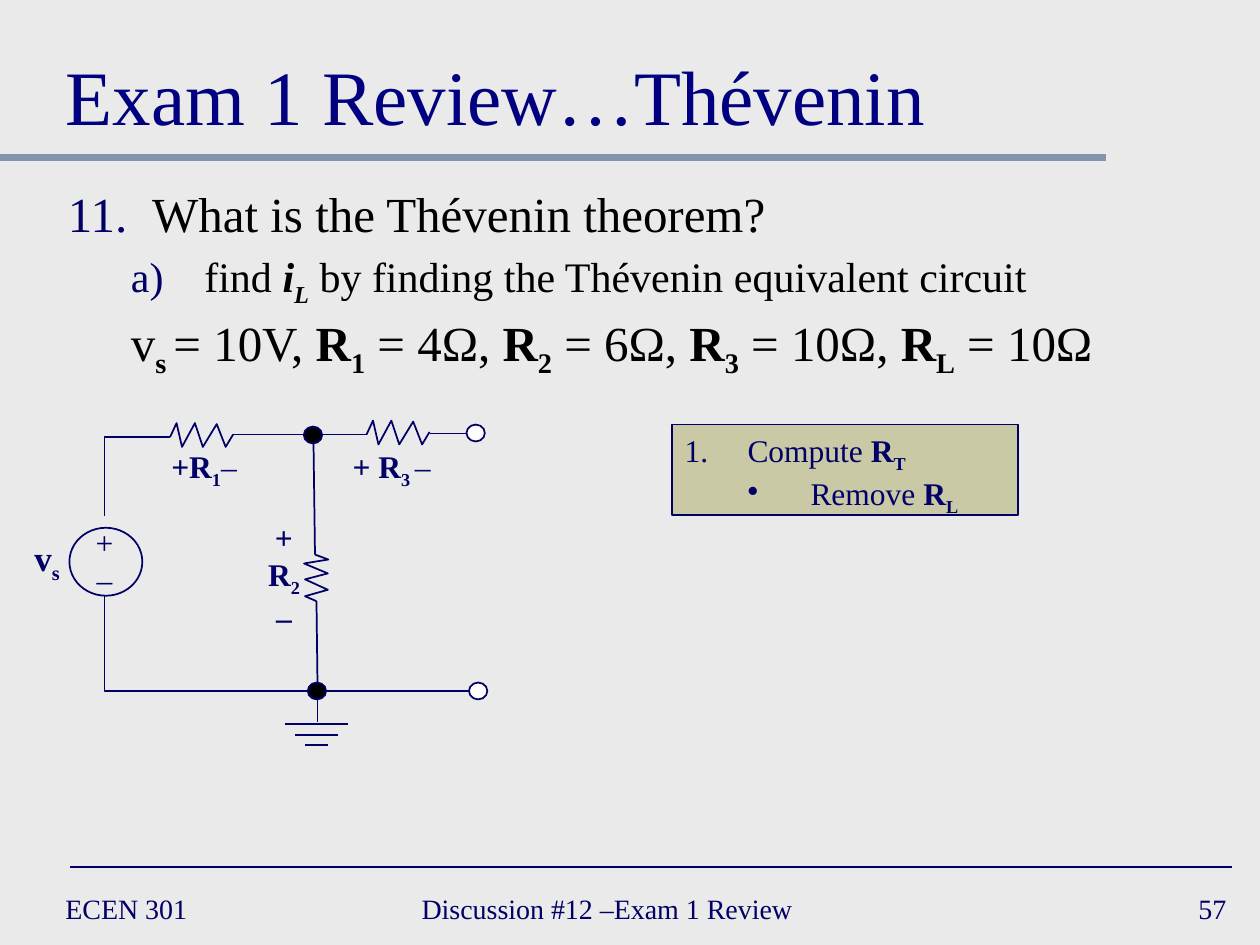
from dataclasses import dataclass

from lxml import etree
from pptx import Presentation
from pptx.dml.color import RGBColor
from pptx.enum.shapes import MSO_CONNECTOR, MSO_SHAPE
from pptx.enum.text import MSO_ANCHOR, PP_ALIGN
from pptx.oxml.ns import qn
from pptx.util import Cm, Pt

STRAIGHT, ELBOW = MSO_CONNECTOR.STRAIGHT, MSO_CONNECTOR.ELBOW
RECTANGLE, OVAL = MSO_SHAPE.RECTANGLE, MSO_SHAPE.OVAL
LEFT, CENTER, RIGHT = PP_ALIGN.LEFT, PP_ALIGN.CENTER, PP_ALIGN.RIGHT
TOP, MIDDLE, BOTTOM = MSO_ANCHOR.TOP, MSO_ANCHOR.MIDDLE, MSO_ANCHOR.BOTTOM
TITLE_ONLY = 5


@dataclass(frozen=True)
class Theme:
    font: str = "Times New Roman"
    background: str = "EAEAEA"
    ink: str = "000066"
    title: str = "000080"
    black: str = "000000"
    white: str = "FFFFFF"
    bar: str = "8495A9"
    step: str = "ACA964"
    title_size: int = 44
    question_size: int = 28
    part_size: int = 24
    source_size: int = 20
    label_size: int = 18
    footer_size: int = 16


THEME = Theme()

# Resistor outlines in cm, measured from the end where the wire comes in
ACROSS = [(0, 0), (0.13, -0.28), (0.24, 0.2), (0.5, -0.28), (0.66, 0.2),
          (0.94, -0.26), (1.12, 0.2), (1.27, -0.05)]
DOWN = [(0, 0), (0.27, 0.1), (-0.22, 0.18), (0.26, 0.38), (-0.2, 0.5),
        (0.26, 0.71), (-0.2, 0.84), (0.03, 0.94)]


def rgb(value):
    return RGBColor.from_string(value)


def set_bullet(paragraph, margin, hanging, bullet=None, start=1):
    """Indent a paragraph; bullet is a numbering scheme or a character."""
    props = paragraph._p.get_or_add_pPr()
    props.set("marL", str(Cm(margin)))
    props.set("indent", str(-Cm(hanging)))
    if bullet is None:
        etree.SubElement(props, qn("a:buNone"))
        return
    color = etree.SubElement(props, qn("a:buClr"))
    etree.SubElement(color, qn("a:srgbClr")).set("val", THEME.ink)
    if len(bullet) == 1:
        etree.SubElement(props, qn("a:buChar")).set("char", bullet)
    else:
        numbering = etree.SubElement(props, qn("a:buAutoNum"))
        numbering.set("type", bullet)
        numbering.set("startAt", str(start))


def write(paragraph, runs, size=THEME.label_size, color=THEME.ink, align=LEFT,
          before=0, spacing=None, indent=None):
    """Runs are (text, marks) pairs; marks: b bold, i italic, s subscript."""
    paragraph.alignment = align
    paragraph.space_before = Pt(before)
    if spacing:
        paragraph.line_spacing = spacing
    if indent:
        set_bullet(paragraph, *indent)
    for text, marks in runs:
        run = paragraph.add_run()
        run.text = text
        run.font.name, run.font.size = THEME.font, Pt(size)
        run.font.bold, run.font.italic = "b" in marks, "i" in marks
        run.font.color.rgb = rgb(color)
        if "s" in marks:
            run._r.get_or_add_rPr().set("baseline", "-25000")


def write_all(frame, lines, anchor=TOP, wrap=True, **style):
    """Lines are run lists, or (run list, own format) pairs."""
    frame.word_wrap, frame.vertical_anchor = wrap, anchor
    for number, line in enumerate(lines):
        runs, own = line if isinstance(line, tuple) else (line, {})
        paragraph = frame.add_paragraph() if number else frame.paragraphs[0]
        write(paragraph, runs, **{**style, **own})


def add_text(slide, box, lines, **style):
    frame = slide.shapes.add_textbox(*map(Cm, box)).text_frame
    write_all(frame, lines, **style)


def add_wire(slide, start, end, color=THEME.ink, width=1, corner=False):
    """A corner wire runs level first, then upright."""
    wire = slide.shapes.add_connector(ELBOW if corner else STRAIGHT,
                                      *map(Cm, start + end))
    wire.line.color.rgb, wire.line.width = rgb(color), Pt(width)
    props = wire._element.spPr
    if corner:
        props.find(qn("a:prstGeom")).set("prst", "bentConnector2")
    etree.SubElement(props, qn("a:effectLst"))


def outline(shape, fill=None):
    shape.shadow.inherit = False
    shape.line.color.rgb, shape.line.width = rgb(THEME.ink), Pt(1)
    if fill:
        shape.fill.solid()
        shape.fill.fore_color.rgb = rgb(fill)
    else:
        shape.fill.background()


def add_shape(slide, kind, box, fill=None):
    shape = slide.shapes.add_shape(kind, *map(Cm, box))
    outline(shape, fill)
    return shape


def add_node(slide, x, y, fill):
    width, height = 0.37, 0.34
    add_shape(slide, OVAL, (x - width / 2, y - height / 2, width, height), fill)


def add_resistor(slide, x, y, offsets):
    points = [(Cm(x + dx), Cm(y + dy)) for dx, dy in offsets]
    builder = slide.shapes.build_freeform(*points[0], scale=1.0)
    builder.add_line_segments(points[1:], close=False)
    outline(builder.convert_to_shape())


def add_frame(slide):
    slide.background.fill.solid()
    slide.background.fill.fore_color.rgb = rgb(THEME.background)
    add_wire(slide, (0, 3.17), (22.3, 3.17), color=THEME.bar, width=4)
    add_wire(slide, (1.42, 17.48), (24.84, 17.48))
    for left, width, text, align in [
            (1.07, 5.51, "ECEN 301", LEFT),
            (8.25, 9.73, "Discussion #12 –Exam 1 Review", LEFT),
            (19.69, 5.28, "57", RIGHT)]:
        add_text(slide, (left, 17.78, width, 1.07), [[(text, "")]],
                 anchor=MIDDLE, size=THEME.footer_size, align=align)
    title = slide.shapes.title
    title.left, title.top, title.width, title.height = map(
        Cm, (1.07, 0.43, 23.29, 2.54))
    write_all(title.text_frame, [[("Exam 1 Review…Thévenin", "")]],
              anchor=BOTTOM, size=THEME.title_size, color=THEME.title)


def add_question(slide):
    values = [("v", ""), ("s ", "bs"), ("= 10V, ", "")]
    for name, value in [("1", "4Ω, "), ("2", "6Ω, "), ("3", "10Ω, "), ("L", "10Ω")]:
        values += [("R", "b"), (name, "bs"), (" = " + value, "")]
    part = [("find ", ""), ("i", "bi"), ("L", "bis"),
            (" by finding the Thévenin equivalent circuit", "")]
    add_text(slide, (1.12, 3.71, 23.22, 3.91), [
        ([("What is the Thévenin theorem?", "")],
         {"indent": (1.7, 1.7, "arabicPeriod", 11)}),
        (part, {"size": THEME.part_size, "before": 4.8,
                "indent": (2.75, 1.48, "alphaLcParenR")}),
        (values, {"before": 5.6, "indent": (2.75, 1.48)}),
    ], size=THEME.question_size, color=THEME.black, spacing=0.9)


def add_step(slide):
    step = add_shape(slide, RECTANGLE, (13.55, 8.56, 6.98, 1.83), THEME.step)
    color = step._element.spPr.find(qn("a:solidFill"))[0]
    etree.SubElement(color, qn("a:alpha")).set("val", "50000")
    write_all(step.text_frame, [
        ([("Compute ", ""), ("R", "b"), ("T", "bs")],
         {"indent": (1.27, 1.27, "arabicPeriod")}),
        ([("Remove ", ""), ("R", "b"), ("L", "bs")],
         {"indent": (2.54, 1.27, "•")})])


def add_circuit(slide):
    # Wires
    add_wire(slide, (6.2, 13.93), (2.11, 12.01), corner=True)
    add_wire(slide, (3.43, 8.81), (2.11, 10.41), corner=True)
    for start, end in [((4.7, 8.76), (6.12, 8.76)), ((6.5, 8.76), (7.39, 8.76)),
                       ((8.66, 8.74), (9.4, 8.74)), ((6.32, 8.94), (6.35, 11.18)),
                       ((6.38, 12.12), (6.4, 13.77)), ((6.4, 13.93), (6.4, 14.55)),
                       ((6.58, 13.93), (9.45, 13.93))]:
        add_wire(slide, start, end)
    # Ground
    for row, width in enumerate([1.27, 0.86, 0.46]):
        y = 14.6 + 0.21 * row
        add_wire(slide, (6.38 - width / 2, y), (6.38 + width / 2, y))
    # Resistors, nodes and open terminals
    for x, y, offsets in [(3.43, 8.81, ACROSS), (7.39, 8.76, ACROSS),
                          (6.35, 11.18, DOWN)]:
        add_resistor(slide, x, y, offsets)
    for x, y, fill in [(6.31, 8.77, THEME.black), (6.39, 13.93, THEME.black),
                       (9.59, 8.73, THEME.white), (9.64, 13.93, THEME.white)]:
        add_node(slide, x, y, fill)
    # Voltage source and labels
    add_shape(slide, OVAL, (1.4, 10.64, 1.47, 1.37))
    add_text(slide, (0.43, 10.69, 1.04, 1.02), [[("v", "b"), ("s", "bs")]],
             wrap=False, align=CENTER, size=THEME.source_size)
    for box, lines in [
            ((1.68, 10.41, 0.86, 1.78), [[("+", "")], [("–", "")]]),
            ((3.1, 8.89, 2.03, 1.02), [[("+R", "b"), ("1", "bs"), ("–", "")]]),
            ((6.83, 8.89, 2.13, 1.02), [[("+ R", "b"), ("3 ", "bs"), ("–", "")]]),
            ((5.13, 10.31, 1.19, 2.54),
             [[("+", "b")], [("R", "b"), ("2", "bs")], [("–", "b")]])]:
        add_text(slide, box, lines, wrap=False, align=CENTER)


def main():
    deck = Presentation()
    deck.slide_width, deck.slide_height = Cm(25.4), Cm(19.05)
    slide = deck.slides.add_slide(deck.slide_layouts[TITLE_ONLY])
    add_frame(slide)
    add_question(slide)
    add_step(slide)
    add_circuit(slide)
    deck.save("out.pptx")


if __name__ == "__main__":
    main()
